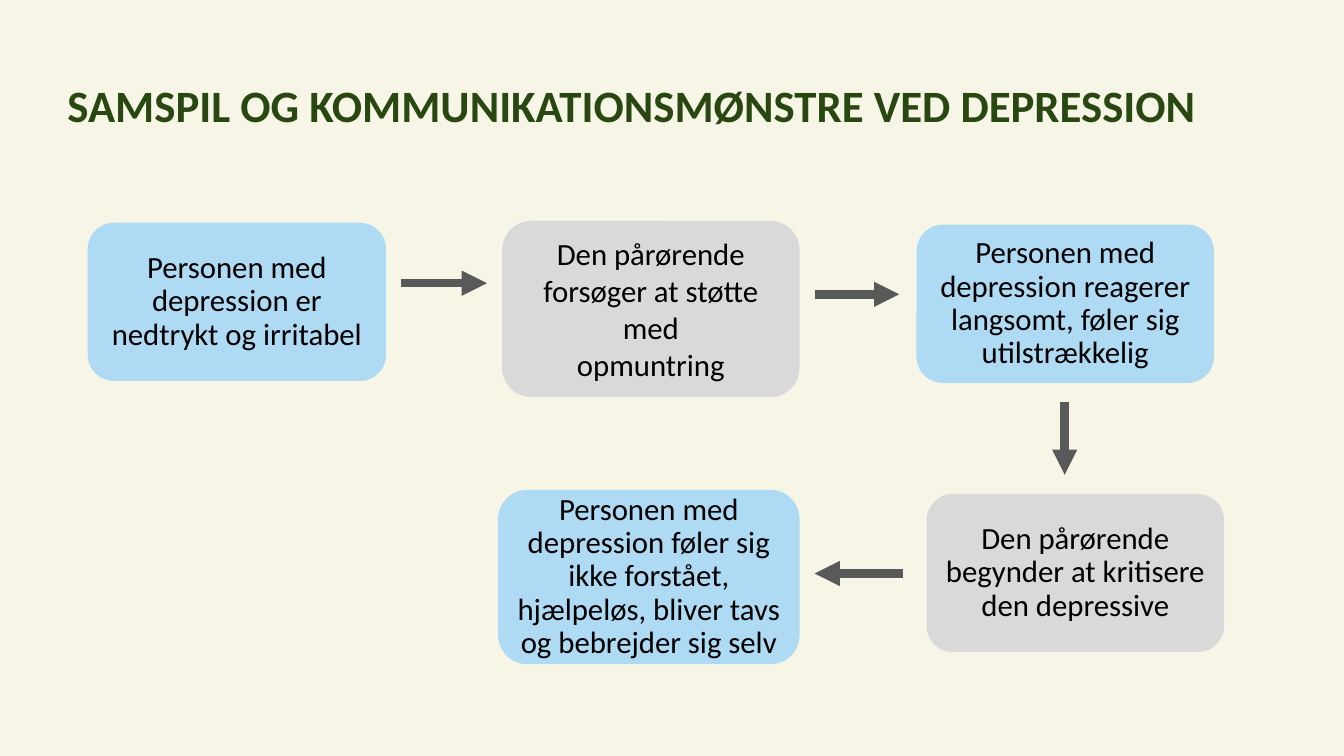
from lxml import etree
from pptx import Presentation
from pptx.dml.color import RGBColor
from pptx.enum.shapes import MSO_CONNECTOR, MSO_SHAPE
from pptx.enum.text import MSO_ANCHOR, PP_ALIGN
from pptx.oxml.ns import qn
from pptx.util import Inches, Pt

ROUNDED = MSO_SHAPE.ROUNDED_RECTANGLE
STRAIGHT = MSO_CONNECTOR.STRAIGHT
MIDDLE = MSO_ANCHOR.MIDDLE
CENTER = PP_ALIGN.CENTER

CREAM = RGBColor(0xF7, 0xF6, 0xE6)
GREEN = RGBColor(0x29, 0x47, 0x11)
BLUE = RGBColor(0xAF, 0xDA, 0xF3)
GREY = RGBColor(0xD9, 0xD9, 0xD9)
DARK_GREY = RGBColor(0x59, 0x59, 0x59)
BLACK = RGBColor(0, 0, 0)


def write(frame, lines, size, color, spacing):
    frame.word_wrap = True
    frame.vertical_anchor = MIDDLE
    for index, line in enumerate(lines):
        para = frame.paragraphs[0] if index == 0 else frame.add_paragraph()
        para.text = line
        para.line_spacing = spacing
        para.font.name = "Calibri"
        para.font.size = Pt(size)
        para.font.color.rgb = color


deck = Presentation()
deck.slide_width = Inches(13.33)
deck.slide_height = Inches(7.5)
page = deck.slides.add_slide(deck.slide_layouts[6])
page.background.fill.solid()
page.background.fill.fore_color.rgb = CREAM

title = page.shapes.add_textbox(Inches(0.57), Inches(0.74), Inches(12.2), Inches(0.66))
write(title.text_frame, ["SAMSPIL OG KOMMUNIKATIONSMØNSTRE VED DEPRESSION"], 32, GREEN, 0.9)
title.text_frame.paragraphs[0].font.bold = True

steps = [
    (0.87, 2.21, 2.96, 1.57, BLUE, 0.9, ["Personen med depression er nedtrykt og irritabel"]),
    (4.98, 2.19, 2.95, 1.75, GREY, 1.0, ["Den pårørende forsøger at støtte med", "opmuntring"]),
    (9.09, 2.23, 2.95, 1.57, BLUE, 0.9,
     ["Personen med depression reagerer langsomt, føler sig utilstrækkelig"]),
    (9.19, 4.9, 2.95, 1.57, GREY, 0.9, ["Den pårørende begynder at kritisere den depressive"]),
    (4.94, 4.86, 2.99, 1.73, BLUE, 0.9,
     ["Personen med depression føler sig ikke forstået, hjælpeløs, bliver tavs og bebrejder sig selv"]),
]
for left, top, width, height, color, spacing, lines in steps:
    box = page.shapes.add_shape(ROUNDED, Inches(left), Inches(top), Inches(width), Inches(height))
    box.shadow.inherit = False
    box.fill.solid()
    box.fill.fore_color.rgb = color
    box.line.fill.background()
    write(box.text_frame, lines, 22, BLACK, spacing)
    for para in box.text_frame.paragraphs:
        para.alignment = CENTER

arrows = [
    (3.98, 2.81, 4.83, 2.81),
    (8.08, 2.92, 8.92, 2.92),
    (10.56, 3.99, 10.56, 4.71),
    (8.96, 5.69, 8.08, 5.69),
]
for ends in arrows:
    arrow = page.shapes.add_connector(STRAIGHT, *[Inches(value) for value in ends])
    arrow.line.color.rgb = DARK_GREY
    arrow.line.width = Pt(6)
    outline = arrow.line._get_or_add_ln()
    etree.SubElement(outline, qn("a:tailEnd"), type="triangle")
    etree.SubElement(outline.getparent(), qn("a:effectLst"))

deck.save("out.pptx")
